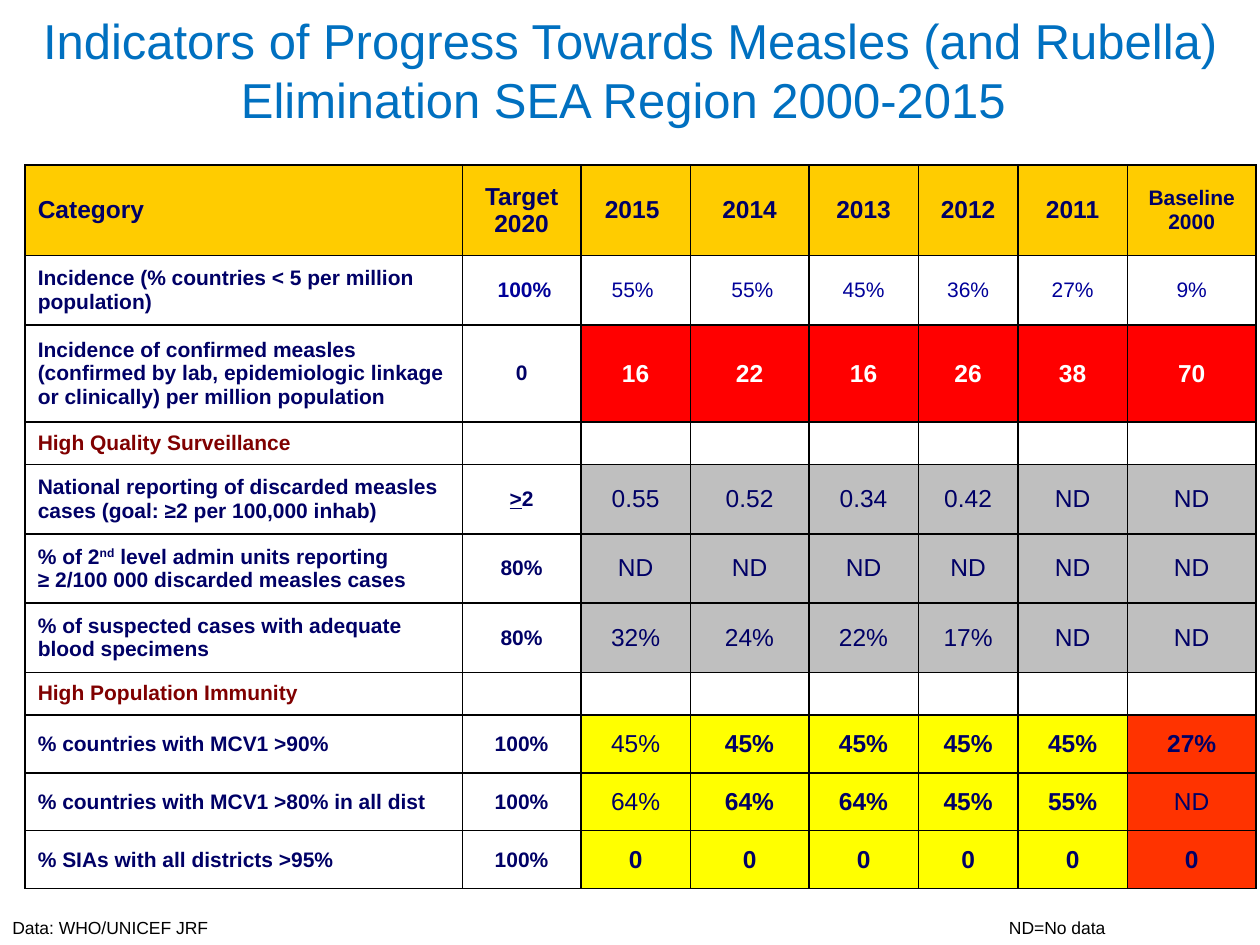
from dataclasses import dataclass

from lxml import etree
from pptx import Presentation, util as u
from pptx.dml.color import RGBColor
from pptx.enum import text
from pptx.oxml import ns


@dataclass(frozen=True)
class Theme:
    """Colours, type sizes and font of the slide."""
    font: str = "Arial"
    title: str = "0070C0"
    black: str = "000000"
    white: str = "FFFFFF"
    navy: str = "000066"
    blue: str = "000099"
    maroon: str = "800000"
    header: str = "FFCC00"
    alarm: str = "FF0000"
    grey: str = "BFBFBF"
    yellow: str = "FFFF00"
    baseline: str = "FF3300"
    title_size: int = 28
    large: int = 14
    small: int = 12
    note: int = 10


@dataclass(frozen=True)
class Span:
    """A run of text with its special marks."""
    words: str
    underline: bool = False
    raised: bool = False


@dataclass(frozen=True)
class Look:
    """Size, colour, weight and alignment of a text."""
    size: int
    color: str
    bold: bool = False
    centered: bool = True


@dataclass(frozen=True)
class Band:
    """A table row with the style of its values."""
    height: float
    label: list
    target: list
    values: list
    look: Look = None
    fills: tuple = (None,) * 6
    regular: tuple = ()
    target_color: str = Theme.navy


class Painter:
    """Draws styled elements on the current slide."""

    def __init__(self, deck, theme):
        """Add a blank slide to the deck."""
        self.theme = theme
        self.slide = deck.slides.add_slide(deck.slide_layouts[6])

    def fill_text(self, frame, paragraphs, look):
        """Fill a text frame; each paragraph is a list of lines of spans."""
        for index, lines in enumerate(paragraphs):
            para = frame.paragraphs[0] if index == 0 else frame.add_paragraph()
            para.alignment = text.PP_ALIGN.CENTER if look.centered else text.PP_ALIGN.LEFT
            for number, line in enumerate(lines):
                if number:
                    para.add_line_break()
                for span in line:
                    self.add_span(para, span, look)

    def add_span(self, para, span, look):
        """Append one run."""
        run = para.add_run()
        run.text = span.words
        run.font.name = self.theme.font
        run.font.size = u.Pt(look.size)
        run.font.bold = look.bold
        run.font.color.rgb = RGBColor.from_string(look.color)
        if span.underline:
            run.font.underline = True
        if span.raised:
            run._r.get_or_add_rPr().set("baseline", "30000")

    def box(self, left, top, width, height, words, look, anchor=text.MSO_ANCHOR.TOP):
        """Add a wrapping text box."""
        frame = self.slide.shapes.add_textbox(
            *map(u.Inches, (left, top, width, height))).text_frame
        frame.word_wrap = True
        frame.auto_size = text.MSO_AUTO_SIZE.SHAPE_TO_FIT_TEXT
        frame.vertical_anchor = anchor
        self.fill_text(frame, plain(words), look)

    def table(self, left, top, widths, heights):
        """Add an unstyled table with the given grid."""
        table = self.slide.shapes.add_table(
            len(heights), len(widths), u.Inches(left), u.Inches(top),
            u.Inches(sum(widths)), u.Inches(sum(heights))).table
        table.first_row = table.horz_banding = False
        for column, width in zip(table.columns, widths):
            column.width = u.Inches(width)
        for row, height in zip(table.rows, heights):
            row.height = u.Inches(height)
        return table

    def cell(self, cell, paragraphs, look, fill=None):
        """Fill in, border and colour one table cell."""
        cell.vertical_anchor = text.MSO_ANCHOR.MIDDLE
        self.fill_text(cell.text_frame, paragraphs, look)
        if not paragraphs:
            cell.text_frame.paragraphs[0].font.size = u.Pt(look.size)
        properties = cell._tc.get_or_add_tcPr()
        for side in ("lnL", "lnR", "lnT", "lnB"):
            line = etree.SubElement(properties, ns.qn(f"a:{side}"), w=str(u.Pt(1)))
            solid = etree.SubElement(line, ns.qn("a:solidFill"))
            etree.SubElement(solid, ns.qn("a:srgbClr"), val=self.theme.black)
        if fill:
            cell.fill.solid()
            cell.fill.fore_color.rgb = RGBColor.from_string(fill)
        else:
            cell.fill.background()


def plain(*texts):
    """Return one single-run paragraph per text."""
    return [[[Span(words)]] for words in texts]


def indicator_bands(theme):
    """Return the table rows below the header."""
    grey = Look(theme.large, theme.navy)
    strong = Look(theme.large, theme.navy, bold=True)
    greys = (theme.grey,) * 6
    yellows = (theme.yellow,) * 5 + (theme.baseline,)
    second_level = [[[Span("% of 2"), Span("nd", raised=True), Span(" level admin units reporting ")],
                     [Span("≥ 2/100 000 discarded measles cases")]]]
    at_least_two = [[[Span(">", underline=True), Span("2")]]]
    return [
        Band(0.55, plain("Incidence (% countries < 5 per million population)"), plain(" 100%"),
             ["55% ", " 55%", "45%", "36%", "27%", "9%"],
             Look(theme.small, theme.blue), target_color=theme.blue),
        Band(0.77, plain("Incidence of confirmed measles (confirmed by lab, epidemiologic "
                         "linkage or clinically) per million population"), plain("0"),
             ["16", "22", "16", "26", "38", "70"],
             Look(theme.large, theme.white, bold=True), (theme.alarm,) * 6),
        Band(0.32, plain("High Quality Surveillance"), [], []),
        Band(0.55, plain("National reporting of discarded measles cases "
                         "(goal: ≥2 per 100,000 inhab)"), at_least_two,
             ["0.55", "0.52", "0.34", "0.42", "ND", "ND"], grey, greys),
        Band(0.55, second_level, plain("80%"), ["ND"] * 6, grey, greys),
        Band(0.55, plain("% of suspected cases with adequate blood specimens"), plain("80%"),
             ["32%", "24%", "22%", "17%", "ND", "ND"], grey, greys),
        Band(0.32, plain("High Population Immunity"), [], []),
        Band(0.46, plain("% countries with MCV1 >90%"), plain("100%"),
             ["45%"] * 5 + ["27%"], strong, yellows, regular=(0,)),
        Band(0.46, plain("% countries with MCV1 >80% in all dist"), plain("100%"),
             ["64%", "64%", "64%", "45%", "55%", "ND"], strong, yellows, regular=(0, 5)),
        Band(0.46, plain("% SIAs with all districts >95%"), plain("100%"),
             ["0"] * 6, strong, yellows),
    ]


def draw_indicators(painter):
    """Draw the indicator table."""
    theme = painter.theme
    bands = indicator_bands(theme)
    table = painter.table(0.2, 1.31, [3.47, 0.94, 0.87, 0.94, 0.87, 0.79, 0.87, 1.02],
                          [0.72] + [band.height for band in bands])
    headings = ["Category", "Target 2020", "2015 ", "2014", "2013", "2012", "2011"]
    for column, heading in enumerate(headings):
        look = Look(theme.large, theme.navy, True, centered=column > 0)
        painter.cell(table.cell(0, column), plain(heading), look, theme.header)
    painter.cell(table.cell(0, 7), plain("Baseline", "2000"),
                 Look(theme.small, theme.navy, True), theme.header)
    for row, band in enumerate(bands, start=1):
        label_color = theme.navy if band.values else theme.maroon
        painter.cell(table.cell(row, 0), band.label,
                     Look(theme.small, label_color, True, centered=False))
        painter.cell(table.cell(row, 1), band.target, Look(theme.small, band.target_color, True))
        for index, fill in enumerate(band.fills):
            look = band.look or Look(theme.large, theme.navy)
            if index in band.regular:
                look = Look(look.size, look.color)
            value = plain(band.values[index]) if band.values else []
            painter.cell(table.cell(row, index + 2), value, look, fill)


def main():
    """Build and save the slide."""
    deck = Presentation()
    deck.slide_width, deck.slide_height = u.Inches(10), u.Inches(7.5)
    theme = Theme()
    painter = Painter(deck, theme)
    draw_indicators(painter)
    painter.box(0, 0.03, 10, 1.04, "Indicators of Progress Towards Measles (and Rubella) "
                "Elimination SEA Region 2000-2015 ",
                Look(theme.title_size, theme.title), text.MSO_ANCHOR.MIDDLE)
    note = Look(theme.note, theme.black, centered=False)
    painter.box(0, 7.23, 1.93, 0.27, "Data: WHO/UNICEF JRF", note)
    painter.box(7.91, 7.23, 1.46, 0.27, "ND=No data", note)
    deck.save("out.pptx")


if __name__ == "__main__":
    main()
